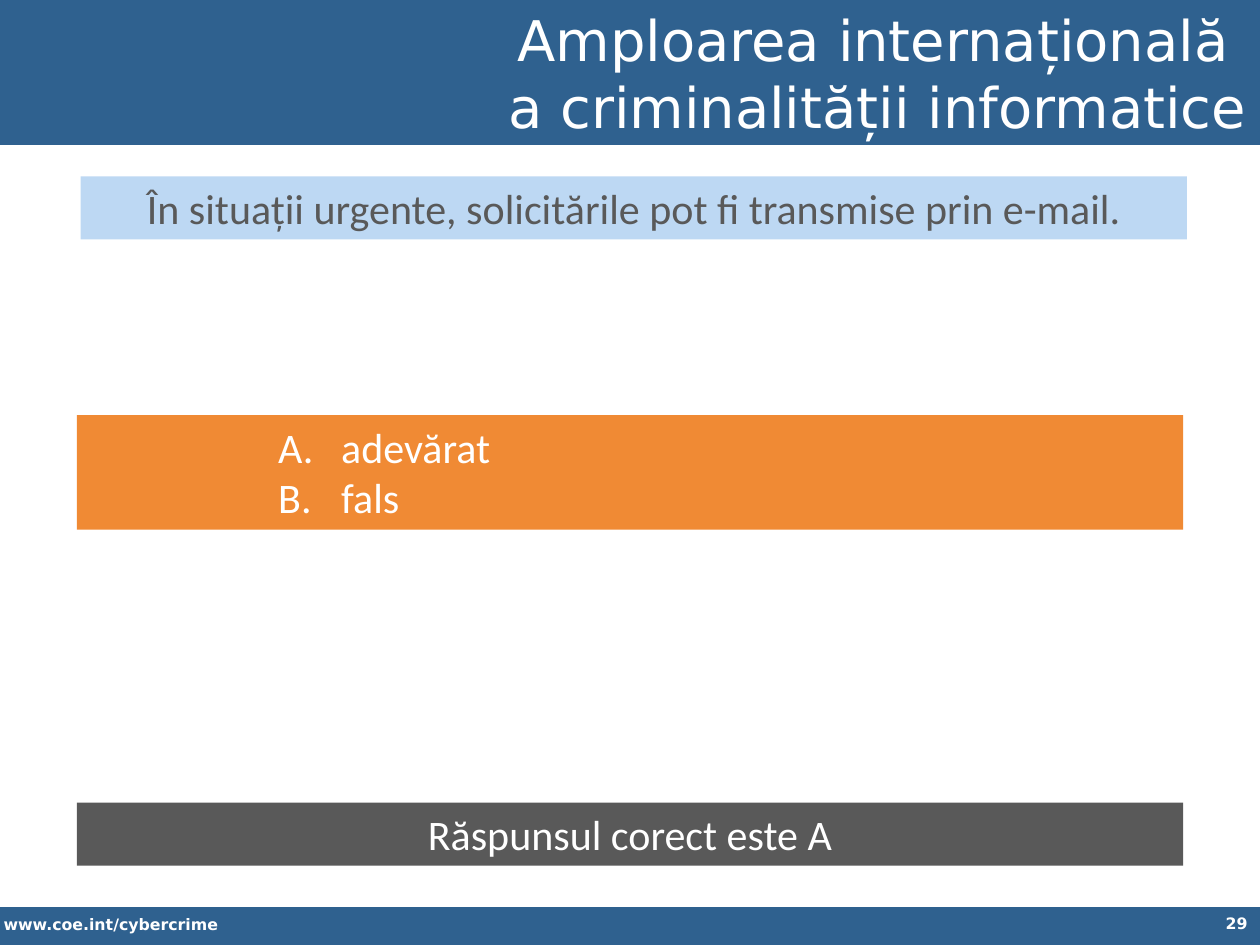
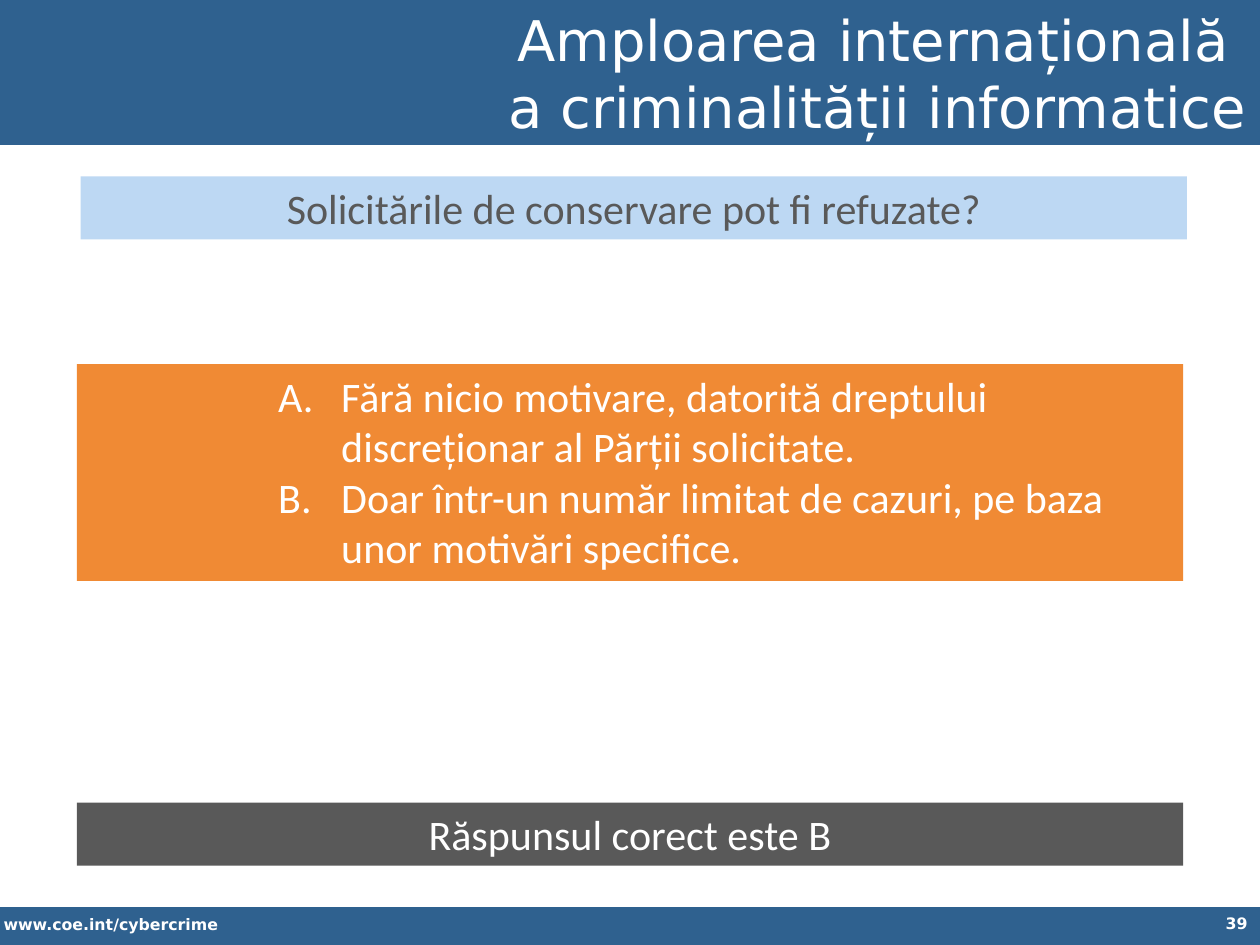
from lxml.etree import SubElement as Sub
from pptx import Presentation
from pptx.dml.color import RGBColor as RGB
from pptx.enum.shapes import MSO_SHAPE as Shape
from pptx.enum.text import MSO_ANCHOR as Anchor, MSO_AUTO_SIZE as Fit, PP_ALIGN as Align
from pptx.oxml.ns import qn
from pptx.util import Inches, Pt

BLUE, PALE, ORANGE = "2F618F", "BDD8F3", "F08A34"
GRAY, WHITE = "595959", "FFFFFF"
HEAD, BODY = "DejaVu Sans", "Calibri"
LEFT, WIDE, MID = 0.61, 8.78, 3.75
TITLE = ["Amploarea internațională ", "a criminalității informatice"]


def color(code):
    return RGB.from_string(code)


class Deck:
    """Builds quiz slides in one shared style."""

    def __init__(self):
        self.prs = Presentation()
        self.prs.slide_width, self.prs.slide_height = Inches(10), Inches(7.5)

    def text(self, shape, lines, size, font=BODY, ink=WHITE, align=Align.LEFT,
             bold=False, anchor=Anchor.TOP, letters=False, fit=Fit.NONE):
        frame = shape.text_frame
        frame.word_wrap = True
        frame.auto_size = fit
        frame.vertical_anchor = anchor
        for i, line in enumerate(lines):
            para = frame.add_paragraph() if i else frame.paragraphs[0]
            para.text = line
            para.alignment = align
            if letters:
                props = para._p.get_or_add_pPr()
                props.set("marL", str(Inches(2)))
                props.set("indent", str(Inches(-0.5)))
                Sub(props, qn("a:buFont"), typeface="+mj-lt")
                Sub(props, qn("a:buAutoNum"), type="alphaUcPeriod")
            para.font.name, para.font.size = font, Pt(size)
            para.font.bold = bold
            para.font.color.rgb = color(ink)

    def label(self, box, text, align):
        shape = self.slide.shapes.add_textbox(*map(Inches, box))
        self.text(shape, [text], 9, HEAD, align=align, bold=True)

    def bar(self, box, fill):
        shape = self.slide.shapes.add_shape(Shape.RECTANGLE, *map(Inches, box))
        shape.shadow.inherit = False
        shape.fill.solid()
        shape.fill.fore_color.rgb = color(fill)
        shape.line.fill.background()
        return shape

    def panel(self, box, fill, lines, **style):
        self.text(self.bar(box, fill), lines, 24, fit=Fit.SHAPE_TO_FIT_TEXT, **style)

    def frame(self, number):
        self.slide = self.prs.slides.add_slide(self.prs.slide_layouts[6])
        self.bar((0, -0.03, 10, 1.18), BLUE)
        self.bar((0, 7.2, 10, 0.32), BLUE)
        self.label((-0.07, 7.21, 3.52, 0.25), "www.coe.int/cybercrime", Align.LEFT)
        self.label((7.67, 7.2, 2.33, 0.3), str(number), Align.RIGHT)
        title = self.bar((2.2, 0.07, 7.8, 1.01), BLUE)
        self.text(title, TITLE, 32, HEAD, align=Align.RIGHT, anchor=Anchor.MIDDLE)

    def quiz(self, number, question, choices, high, answer):
        self.frame(number)
        self.panel((0.64, 1.4, WIDE, 0.5), PALE, [question], ink=GRAY, align=Align.CENTER)
        self.panel((LEFT, 6.37, WIDE, 0.5), GRAY, [f"Răspunsul corect este {answer}"],
                   align=Align.CENTER)
        self.panel((LEFT, MID - high / 2, WIDE, high), ORANGE, choices, letters=True)


def main():
    deck = Deck()
    deck.quiz(29, "În situații urgente, solicitările pot fi transmise prin e-mail.",
              ["adevărat", "fals"], 0.91, "A")
    deck.quiz(39, "Solicitările de conservare pot fi refuzate?",
              ["Fără nicio motivare, datorită dreptului discreționar al Părții solicitate.",
               "Doar într-un număr limitat de cazuri, pe baza unor motivări specifice."],
              1.72, "B")
    deck.prs.save("out.pptx")


if __name__ == "__main__":
    main()
